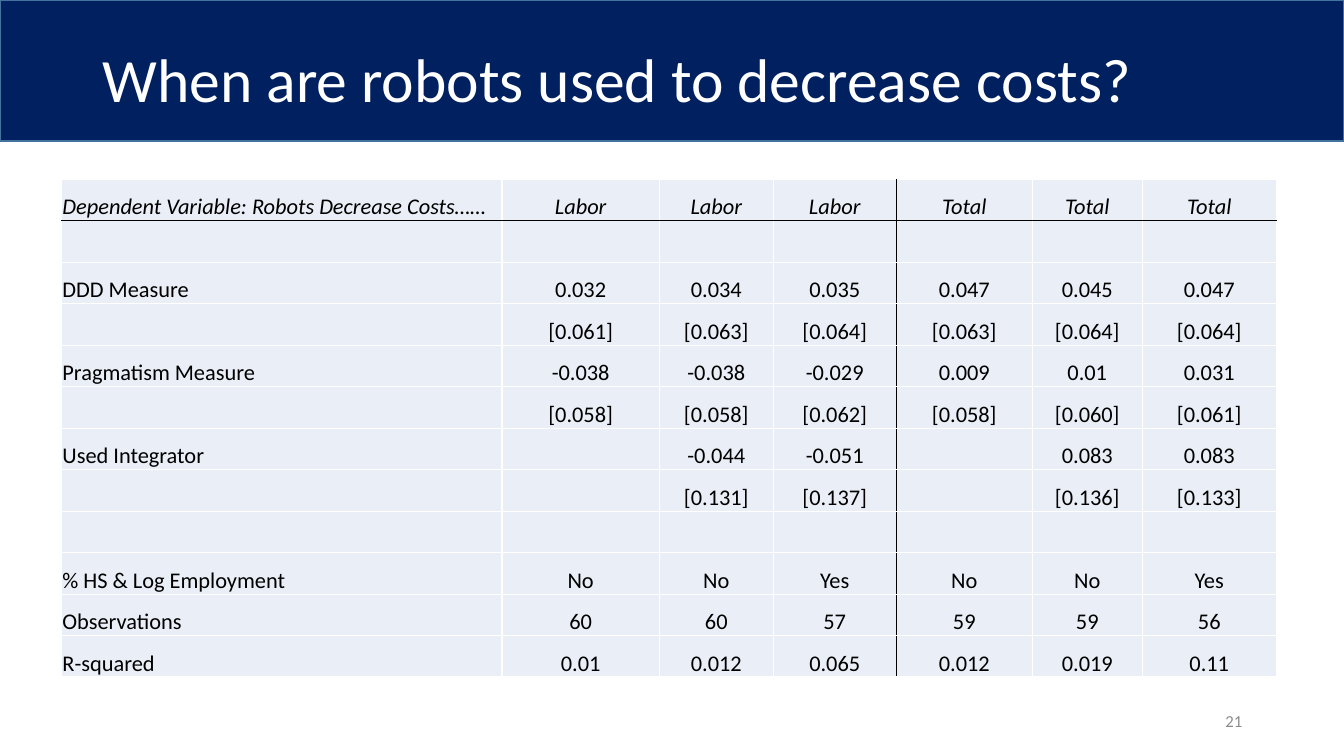
import dataclasses
import typing

import lxml.etree
import pptx
import pptx.dml.color
import pptx.enum.shapes
import pptx.enum.text
import pptx.oxml.ns
import pptx.util

Inches = pptx.util.Inches
Pt = pptx.util.Pt
Align = pptx.enum.text.PP_ALIGN
Anchor = pptx.enum.text.MSO_ANCHOR

COLORS = {
    "navy": "002060",
    "edge": "43739E",
    "white": "FFFFFF",
    "black": "000000",
    "gray": "8C8C8C",
    "cell": "EAEFF7",
}

TABLE_HEIGHT = 4.94
COL_WIDTHS = [4.37, 1.56, 1.13, 1.22, 1.35, 1.09, 1.33]
FIRST_TOTAL_COL = 4
ROWS = [
    ["Dependent Variable: Robots Decrease Costs……"] + ["Labor"] * 3 + ["Total"] * 3,
    [""] * 7,
    ["DDD Measure", "0.032", "0.034", "0.035", "0.047", "0.045", "0.047"],
    ["", "[0.061]", "[0.063]", "[0.064]", "[0.063]", "[0.064]", "[0.064]"],
    ["Pragmatism Measure", "-0.038", "-0.038", "-0.029", "0.009", "0.01", "0.031"],
    ["", "[0.058]", "[0.058]", "[0.062]", "[0.058]", "[0.060]", "[0.061]"],
    ["Used Integrator", "", "-0.044", "-0.051", "", "0.083", "0.083"],
    ["", "", "[0.131]", "[0.137]", "", "[0.136]", "[0.133]"],
    [""] * 7,
    ["% HS & Log Employment", "No", "No", "Yes", "No", "No", "Yes"],
    ["Observations", "60", "60", "57", "59", "59", "56"],
    ["R-squared", "0.01", "0.012", "0.065", "0.012", "0.019", "0.11"],
]


@dataclasses.dataclass
class Label:
    text: str
    left: float
    top: float
    width: float
    height: float
    size: int
    color: str
    align: typing.Any
    line_spacing: float = 1.0


LABELS = [
    Label("When are robots used to decrease costs?", 0.92, 0.09, 11.97, 1.45,
          44, "white", Align.LEFT, 0.9),
    Label("21", 9.42, 6.95, 3, 0.4, 12, "gray", Align.RIGHT),
]


def rgb(name: str) -> pptx.dml.color.RGBColor:
    return pptx.dml.color.RGBColor.from_string(COLORS[name])


def apply(obj: typing.Any, values: dict[str, typing.Any]) -> None:
    for name, value in values.items():
        setattr(obj, name, value)


def write(p: typing.Any, text: str, size: int, color: str, italic: bool = False) -> None:
    r = p.add_run()
    r.text = text
    apply(r.font, {"name": "Calibri", "size": Pt(size), "italic": italic})
    r.font.color.rgb = rgb(color)


def add_banner(s: typing.Any) -> None:
    sp = s.shapes.add_shape(pptx.enum.shapes.MSO_SHAPE.RECTANGLE,
                            0, 0, Inches(13.33), Inches(1.4))
    sp.shadow.inherit = False
    sp.fill.solid()
    sp.fill.fore_color.rgb = rgb("navy")
    sp.line.color.rgb = rgb("edge")
    sp.line.width = Pt(1)


def add_label(s: typing.Any, label: Label) -> None:
    box = (label.left, label.top, label.width, label.height)
    tf = s.shapes.add_textbox(*map(Inches, box)).text_frame
    apply(tf, {"word_wrap": True, "vertical_anchor": Anchor.MIDDLE})
    p = tf.paragraphs[0]
    apply(p, {"alignment": label.align, "line_spacing": label.line_spacing})
    write(p, label.text, label.size, label.color)


def add_border(cell: typing.Any, side: str, color: str) -> None:
    qn = pptx.oxml.ns.qn
    tc_pr = cell._tc.get_or_add_tcPr()
    ln = lxml.etree.SubElement(tc_pr, qn(f"a:ln{side}"), w=str(Pt(1)))
    fill = lxml.etree.SubElement(ln, qn("a:solidFill"))
    lxml.etree.SubElement(fill, qn("a:srgbClr"), val=COLORS[color])


def format_cell(cell: typing.Any, row: int, col: int, text: str) -> None:
    black_sides = {
        "L": col == FIRST_TOTAL_COL,
        "R": col == FIRST_TOTAL_COL - 1,
        "T": row == 1,
        "B": row == 0,
    }
    for side, is_black in black_sides.items():
        add_border(cell, side, "black" if is_black else "white")
    cell.fill.solid()
    cell.fill.fore_color.rgb = rgb("cell")
    apply(cell, {
        "margin_left": Inches(0.01),
        "margin_top": Inches(0.01),
        "margin_right": Inches(0.01),
        "margin_bottom": 0,
        "vertical_anchor": Anchor.BOTTOM,
    })
    if text:
        p = cell.text_frame.paragraphs[0]
        p.alignment = Align.CENTER if col else Align.LEFT
        write(p, text, 16, "black", italic=row == 0)


def add_results(s: typing.Any) -> None:
    table = s.shapes.add_table(
        len(ROWS), len(COL_WIDTHS), Inches(0.61), Inches(1.78),
        Inches(sum(COL_WIDTHS)), Inches(TABLE_HEIGHT)).table
    for column, width in zip(table.columns, COL_WIDTHS):
        column.width = Inches(width)
    for i, values in enumerate(ROWS):
        table.rows[i].height = Inches(TABLE_HEIGHT / len(ROWS))
        for j, text in enumerate(values):
            format_cell(table.cell(i, j), i, j, text)


def main() -> None:
    prs = pptx.Presentation()
    apply(prs, {"slide_width": Inches(13.33), "slide_height": Inches(7.5)})
    s = prs.slides.add_slide(prs.slide_layouts[6])
    add_banner(s)
    for label in LABELS:
        add_label(s, label)
    add_results(s)
    prs.save("out.pptx")


if __name__ == "__main__":
    main()
